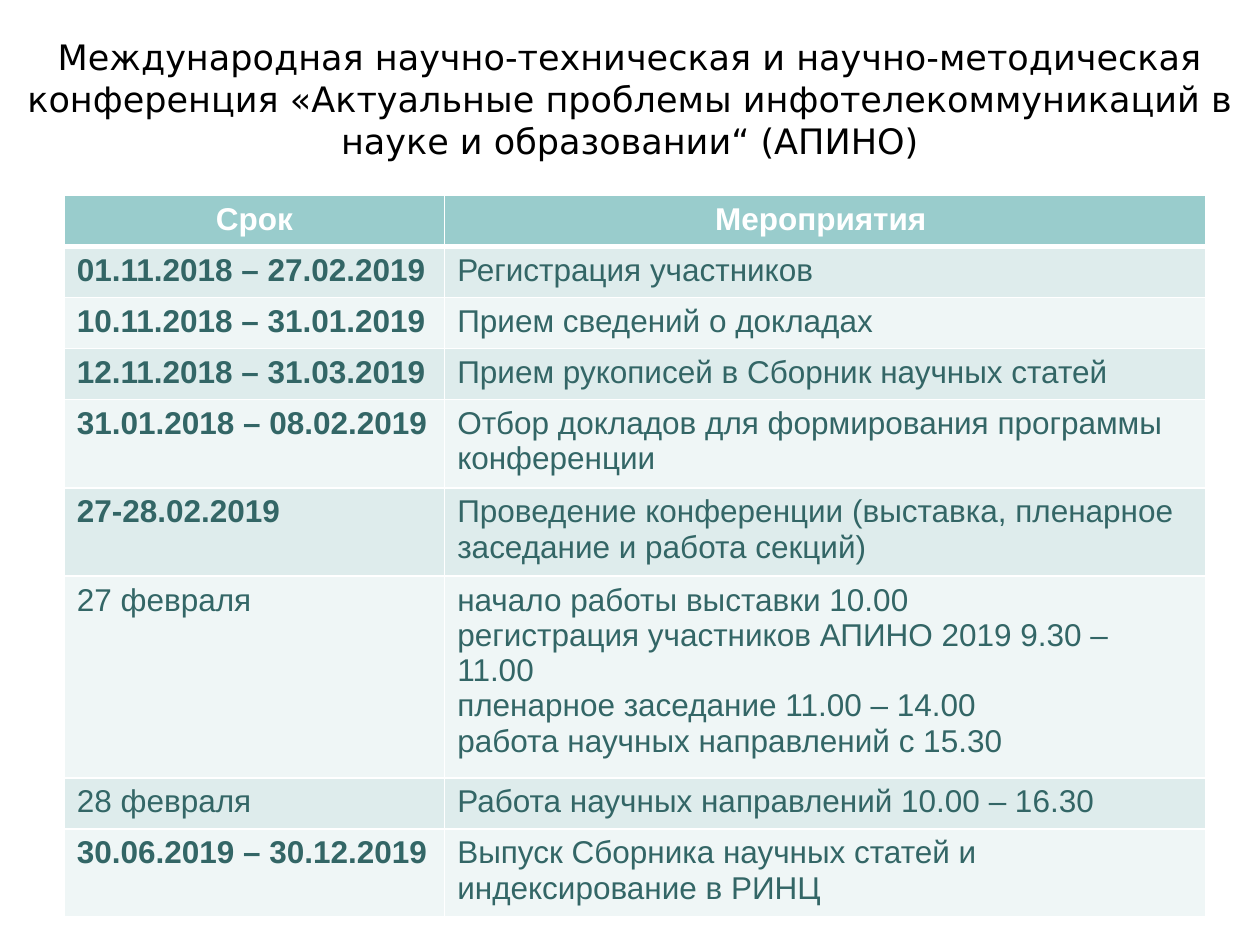
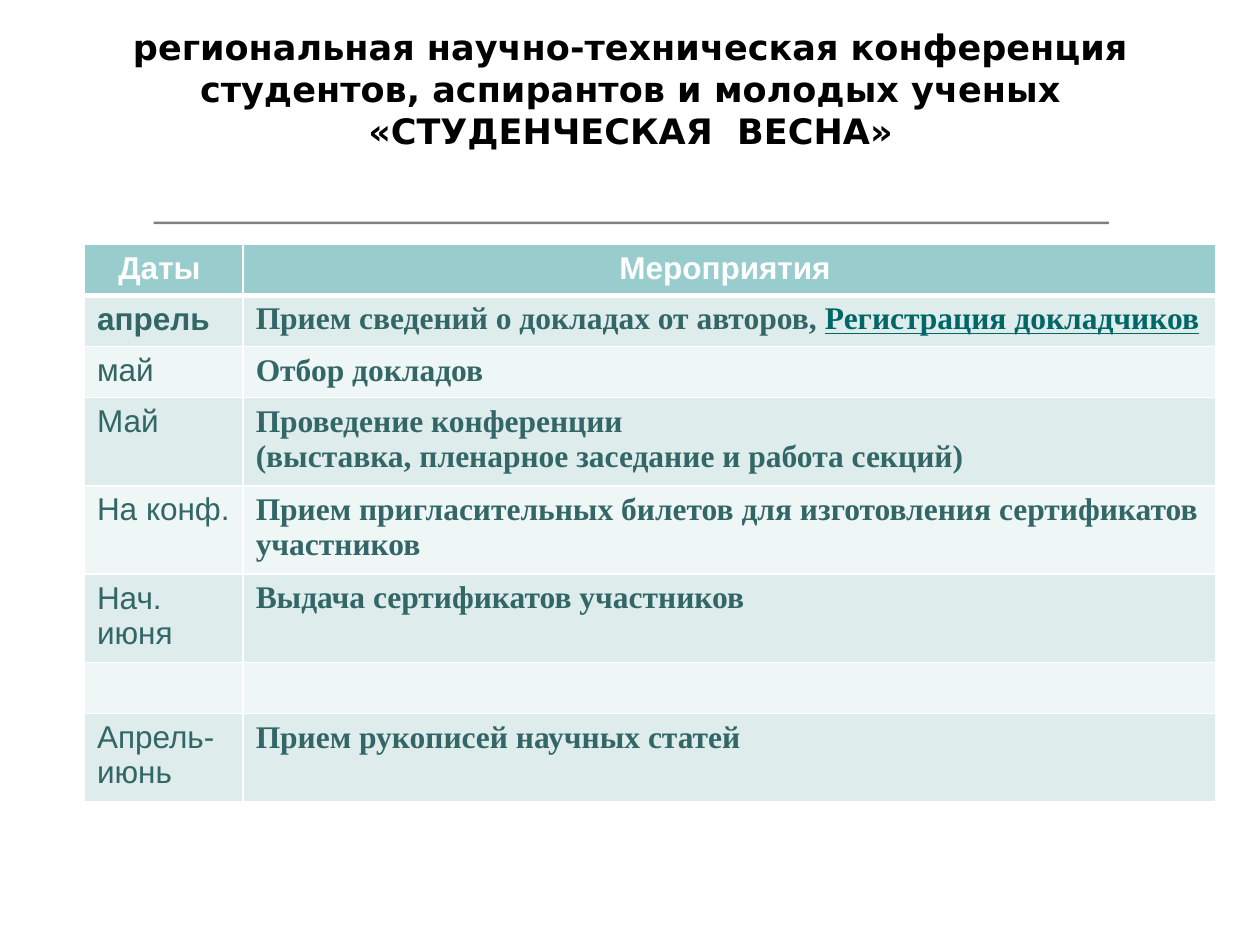
from dataclasses import dataclass
from lxml.etree import SubElement
from pptx import Presentation
from pptx.dml.color import RGBColor as RGB
from pptx.enum.shapes import MSO_SHAPE as SHAPE
from pptx.enum.text import MSO_ANCHOR as ANCHOR, PP_ALIGN as ALIGN
from pptx.oxml import parse_xml
from pptx.oxml.ns import nsdecls, qn
from pptx.util import Inches, Pt


@dataclass(frozen=True)
class Theme:
    """Colours, fonts and sizes shared by the slides."""
    black: str = "000000"
    white: str = "FFFFFF"
    rule: str = "808080"
    header: str = "99CCCC"
    bands: tuple = ("DEECEC", "EFF6F6")
    ink: str = "336666"
    link: str = "006666"
    title_font: str = "DejaVu Sans"
    body_font: str = "Arial"
    serif_font: str = "Times New Roman"
    title_size: int = 20
    body_size: int = 18
    row_points: float = 29.2


T = Theme()
TITLE = dict(name=T.title_font, size=Pt(T.title_size), bold=False, color=T.black)
BODY = dict(name=T.body_font, size=Pt(T.body_size), bold=False, color=T.ink)
BOLD = BODY | dict(bold=True)
HEAD = BOLD | dict(color=T.white)
SERIF = BOLD | dict(name=T.serif_font)
LINK = SERIF | dict(color=T.link, underline=True)

APINO_TITLE = ("Международная научно-техническая и научно-методическая конференция "
               "«Актуальные проблемы инфотелекоммуникаций в науке и образовании“ (АПИНО)")
APINO_HEAD = ("Срок", "Мероприятия ")
APINO_ROWS = [
    ("01.11.2018 – 27.02.2019", BOLD, "Регистрация участников"),
    ("10.11.2018 – 31.01.2019", BOLD, "Прием сведений о докладах"),
    ("12.11.2018 – 31.03.2019", BOLD, "Прием рукописей в Сборник научных статей"),
    ("31.01.2018 – 08.02.2019", BOLD, "Отбор докладов для формирования программы конференции"),
    ("27-28.02.2019", BOLD,
     "Проведение конференции (выставка, пленарное заседание и работа секций)"),
    ("27 февраля", BODY,
     "начало работы выставки 10.00\n"
     "регистрация участников АПИНО 2019 9.30 – 11.00\n"
     "пленарное заседание 11.00 – 14.00\n"
     "работа научных направлений с 15.30"),
    ("28 февраля", BODY, "Работа научных направлений 10.00 – 16.30"),
    ("30.06.2019 – 30.12.2019", BOLD, "Выпуск Сборника научных статей и индексирование в РИНЦ"),
]

SPRING_TITLE = ("региональная научно-техническая конференция студентов, аспирантов "
                "и молодых ученых\n«СТУДЕНЧЕСКАЯ  ВЕСНА»")
SPRING_HEAD = ("Даты ", "Мероприятия ")
SPRING_ROWS = [
    ("апрель", BOLD, "Прием сведений о докладах от авторов, ", "Регистрация докладчиков"),
    ("май", BODY, "Отбор докладов"),
    ("Май", BODY, "Проведение конференции \n(выставка, пленарное заседание и работа секций)"),
    ("На конф.", BODY, "Прием пригласительных билетов для изготовления сертификатов участников"),
    ("Нач. июня", BODY, "Выдача сертификатов участников"),
    ("", BODY, ""),
    ("Апрель-июнь", BODY, "Прием рукописей научных статей"),
]


def add_text(p, text, fmt):
    """Append text to a paragraph, with a line break at each newline."""
    for i, line in enumerate(text.split("\n")):
        if i:
            p.add_line_break()
        if line:
            r = p.add_run()
            r.text = line
            for key, value in fmt.items():
                if key == "color":
                    r.font.color.rgb = RGB.from_string(value)
                else:
                    setattr(r.font, key, value)


def add_title(s, box, text, bold=False, bottom=0.07):
    """Place the centred slide title in the box."""
    tf = s.shapes.add_textbox(*map(Inches, box)).text_frame
    frame = dict(word_wrap=True, vertical_anchor=ANCHOR.MIDDLE, margin_bottom=Inches(bottom))
    for key, value in frame.items():
        setattr(tf, key, value)
    p = tf.paragraphs[0]
    p.alignment = ALIGN.CENTER
    p.line_spacing = Pt(1.2 * T.title_size)
    add_text(p, text, TITLE | dict(bold=bold))


def add_rule(s, box):
    """Place the thin grey bar shared by the slides."""
    sp = s.shapes.add_shape(SHAPE.RECTANGLE, *map(Inches, box))
    sp.shadow.inherit = False
    sp.fill.solid()
    sp.fill.fore_color.rgb = RGB.from_string(T.rule)
    sp.line.fill.background()


def style_cell(cell, fill, top=1, bottom=1):
    """Fill a cell and draw its white borders."""
    cell.fill.solid()
    cell.fill.fore_color.rgb = RGB.from_string(fill)
    tc_pr = cell._tc.get_or_add_tcPr()
    for i, (side, width) in enumerate(dict(L=1, R=1, T=top, B=bottom).items()):
        ln = parse_xml(f'<a:ln{side} {nsdecls("a")} w="{Pt(width)}"/>')
        color = SubElement(SubElement(ln, qn("a:solidFill")), qn("a:srgbClr"))
        color.set("val", T.white)
        tc_pr.insert(i, ln)


def add_schedule(s, left, top, widths, head, rows, event_fmt):
    """Place a schedule of dates and events whose rows grow with their text."""
    height = Pt(T.row_points * (len(rows) + 1))
    table = s.shapes.add_table(len(rows) + 1, 2, Inches(left), Inches(top),
                               Inches(sum(widths)), height).table
    table.first_row = table.horz_banding = False
    for col, width in zip(table.columns, widths):
        col.width = Inches(width)
    for c, text in enumerate(head):
        cell = table.cell(0, c)
        style_cell(cell, T.header, bottom=3)
        p = cell.text_frame.paragraphs[0]
        p.alignment = ALIGN.CENTER
        add_text(p, text, HEAD)
    for i, (date, date_fmt, event, *links) in enumerate(rows):
        runs = [(event, event_fmt)] + [(link, LINK) for link in links]
        for c, parts in enumerate(([(date, date_fmt)], runs)):
            cell = table.cell(i + 1, c)
            style_cell(cell, T.bands[i % 2], top=1 if i else 3)
            for text, fmt in parts:
                add_text(cell.text_frame.paragraphs[0], text, fmt)


def apino_slide(s):
    """Build the schedule of the international conference."""
    add_title(s, (0, 0.29, 10, 1), APINO_TITLE)
    add_schedule(s, 0.51, 1.55, (3.02, 6.04), APINO_HEAD, APINO_ROWS, BODY)


def spring_slide(s):
    """Build the schedule of the regional student conference."""
    add_title(s, (0.28, 0.29, 9.45, 1.18), SPRING_TITLE, bold=True, bottom=0.4)
    add_schedule(s, 0.67, 1.94, (1.26, 7.72), SPRING_HEAD, SPRING_ROWS, SERIF)


def main():
    """Build and save the presentation."""
    prs = Presentation()
    prs.slide_width, prs.slide_height = Inches(10), Inches(7.5)
    for build in (apino_slide, spring_slide):
        s = prs.slides.add_slide(prs.slide_layouts[6])
        add_rule(s, (1.22, 1.76, 7.58, 0.02))
        build(s)
    prs.save("out.pptx")


if __name__ == "__main__":
    main()
